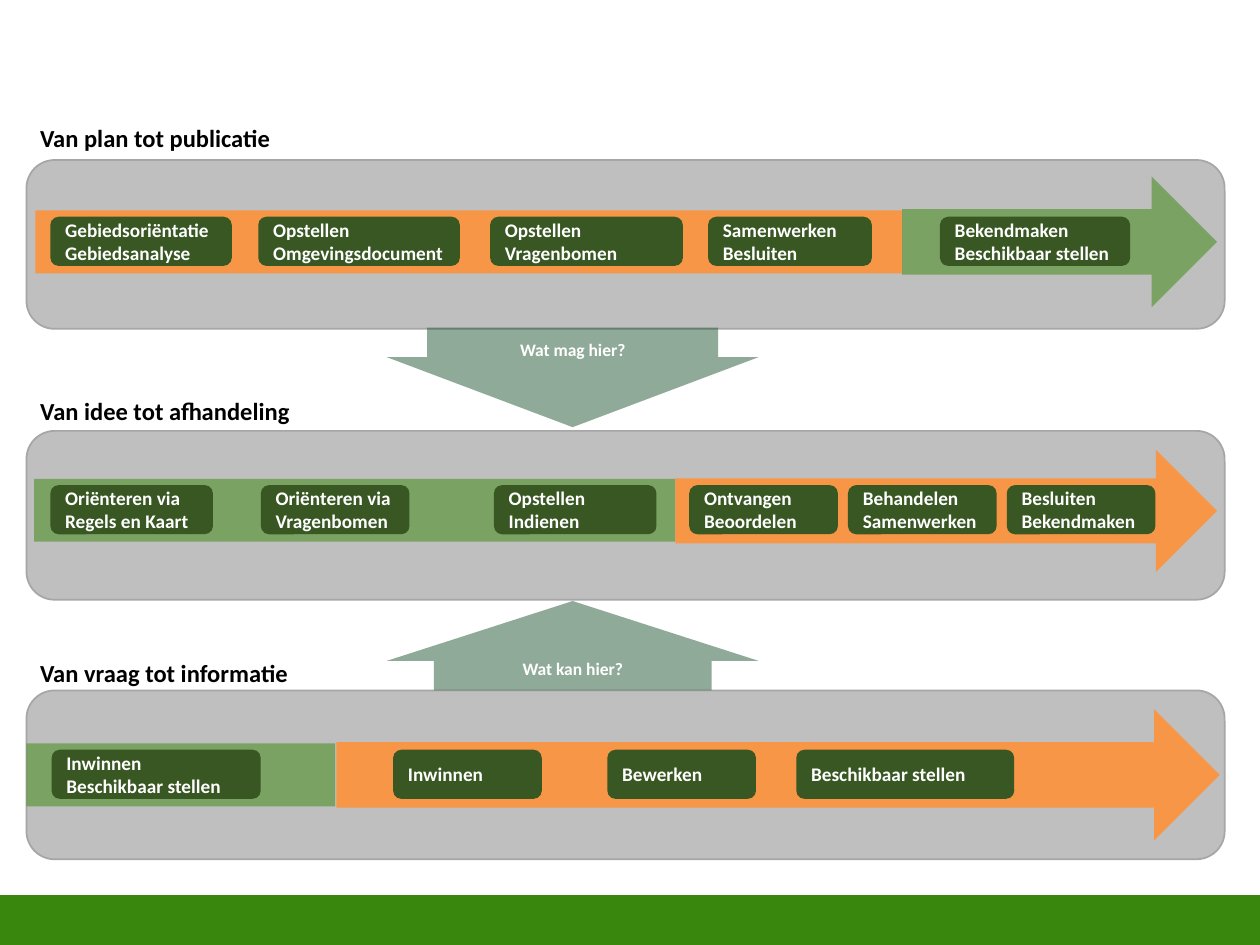
from pptx import Presentation
from pptx.dml.color import RGBColor
from pptx.enum.shapes import MSO_SHAPE
from pptx.enum.text import MSO_ANCHOR, MSO_AUTO_SIZE, PP_ALIGN
from pptx.oxml.ns import qn
from pptx.util import Inches, Pt
from lxml.etree import SubElement

GREEN, ORANGE, DARK, TEAL = "39870C", "F79646", "385723", "275937"
GREY, EDGE, WHITE, BLACK = "BFBFBF", "A6A6A6", "FFFFFF", "000000"
HALF = 51

LANES = [
    {
        "title": "Van plan tot publicatie", "top": 1.27, "title_top": 0.93, "title_width": 2.1,
        "bar": (0.28, 1.67, 6.88, 0.5), "bar_format": {"fill": ORANGE},
        "arrow": (7.16, 1.4, 2.5, 1.04), "arrow_format": {"fill": GREEN, "opacity": HALF},
        "step_top": 1.72,
        "steps": [
            (0.4, 1.44, "Gebiedsoriëntatie\nGebiedsanalyse"),
            (2.05, 1.6, "Opstellen\nOmgevingsdocument"),
            (3.89, 1.53, "Opstellen Vragenbomen"),
            (5.62, 1.3, "Samenwerken\nBesluiten"),
            (7.46, 1.51, "Bekendmaken\nBeschikbaar stellen"),
        ],
    },
    {
        "title": "Van idee tot afhandeling", "top": 3.42, "title_top": 3.09, "title_width": 2.21,
        "bar": (0.27, 3.8, 5.09, 0.5), "bar_format": {"fill": GREEN, "opacity": HALF},
        "arrow": (5.36, 3.57, 4.3, 0.97),
        "arrow_format": {"fill": ORANGE, "adjustments": (0.534, 0.5)},
        "step_top": 3.85,
        "steps": [
            (0.4, 1.29, "Oriënteren via Regels en Kaart"),
            (2.07, 1.18, "Oriënteren via\nVragenbomen"),
            (3.92, 1.29, "Opstellen\nIndienen"),
            (5.47, 1.18, "Ontvangen\nBeoordelen"),
            (6.73, 1.18, "Behandelen\nSamenwerken"),
            (7.99, 1.18, "Besluiten\nBekendmaken"),
        ],
    },
    {
        "title": "Van vraag tot informatie", "top": 5.48, "title_top": 5.17, "title_width": 2.2,
        "bar": (0.21, 5.9, 2.45, 0.5), "bar_format": {"fill": GREEN, "opacity": HALF},
        "arrow": (2.67, 5.63, 7.01, 1.04), "arrow_format": {"fill": ORANGE},
        "step_top": 5.95,
        "steps": [
            (0.41, 1.66, "Inwinnen\nBeschikbaar stellen"),
            (3.12, 1.18, "Inwinnen"),
            (4.82, 1.18, "Bewerken"),
            (6.32, 1.73, "Beschikbaar stellen"),
        ],
    },
]


def color(value):
    """Turn a hex string into a colour."""
    return RGBColor.from_string(value)


def write(frame, text, size=11, fill=WHITE, align=PP_ALIGN.LEFT):
    """Write bold text, one paragraph for each line."""
    for index, line in enumerate(text.split("\n")):
        para = frame.add_paragraph() if index else frame.paragraphs[0]
        para.alignment = align
        span = para.add_run()
        span.text = line
        span.font.name = "Calibri"
        span.font.size = Pt(size)
        span.font.bold = True
        span.font.color.rgb = color(fill)


def add_block(shapes, kind, place, fill, opacity=100, line=None, line_width=1, adjustments=()):
    """Add a flat preset shape."""
    shape = shapes.add_shape(kind, *map(Inches, place))
    shape.shadow.inherit = False
    shape.fill.solid()
    shape.fill.fore_color.rgb = color(fill)
    if opacity < 100:
        tint = shape.fill._xPr.find(qn("a:solidFill"))[0]
        SubElement(tint, qn("a:alpha")).set("val", str(opacity * 1000))
    if line:
        shape.line.color.rgb = color(line)
        shape.line.width = Pt(line_width)
    else:
        shape.line.fill.background()
    for index, value in enumerate(adjustments):
        shape.adjustments[index] = value
    return shape


def add_label(shapes, text, place):
    """Add a lane heading."""
    frame = shapes.add_textbox(*map(Inches, place)).text_frame
    frame.word_wrap = False
    frame.auto_size = MSO_AUTO_SIZE.SHAPE_TO_FIT_TEXT
    write(frame, text, size=14, fill=BLACK)


def add_step(shapes, text, place):
    """Add a dark rounded process step."""
    frame = add_block(shapes, MSO_SHAPE.ROUNDED_RECTANGLE, place, DARK).text_frame
    frame.word_wrap = True
    frame.vertical_anchor = MSO_ANCHOR.MIDDLE
    write(frame, text)


def add_lane(page, lane):
    """Add a grouped lane with its heading, bar, arrow and steps."""
    shapes = page.shapes.add_group_shape().shapes
    add_block(shapes, MSO_SHAPE.ROUNDED_RECTANGLE, (0.21, lane["top"], 9.51, 1.34), GREY, line=EDGE)
    add_label(shapes, lane["title"], (0.22, lane["title_top"], lane["title_width"], 0.34))
    add_block(shapes, MSO_SHAPE.RECTANGLE, lane["bar"], **lane["bar_format"])
    add_block(shapes, MSO_SHAPE.RIGHT_ARROW, lane["arrow"], **lane["arrow_format"])
    for left, width, text in lane["steps"]:
        add_step(shapes, text, (left, lane["step_top"], width, 0.39))


def add_question(page, kind, text, place, adjustments):
    """Add a translucent arrow with a question between two lanes."""
    shape = add_block(page.shapes, kind, place, TEAL, opacity=HALF, adjustments=adjustments)
    shape.text_frame.word_wrap = True
    shape.text_frame.vertical_anchor = MSO_ANCHOR.MIDDLE
    write(shape.text_frame, text, size=10, align=PP_ALIGN.CENTER)


def main():
    """Build the slide and save it."""
    deck = Presentation()
    deck.slide_width, deck.slide_height = Inches(10), Inches(7.5)
    page = deck.slides.add_slide(deck.slide_layouts[6])
    add_block(page.shapes, MSO_SHAPE.RECTANGLE, (0, 7.12, 10, 0.39), GREEN, line=GREEN, line_width=2)
    for lane in LANES:
        add_lane(page, lane)
    add_question(page, MSO_SHAPE.DOWN_ARROW, "Wat mag hier?", (3.07, 2.6, 2.95, 0.79), (0.783, 0.703))
    add_question(page, MSO_SHAPE.UP_ARROW, "Wat kan hier?", (3.07, 4.77, 2.95, 0.71), (0.747, 0.669))
    deck.save("out.pptx")


if __name__ == "__main__":
    main()
